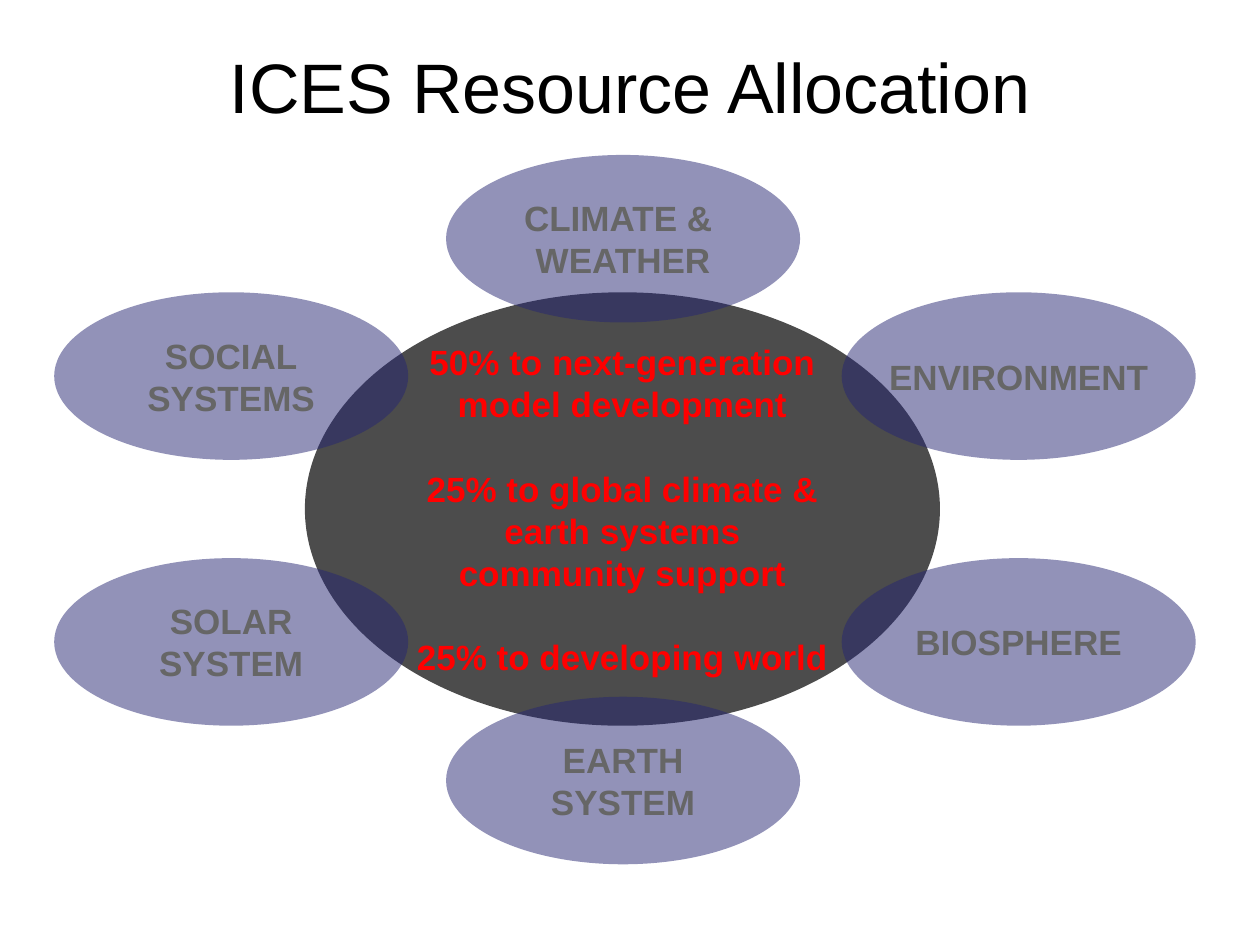
"""Build the ICES resource allocation slide: a hub ellipse ringed by six systems."""

from dataclasses import dataclass

from lxml.etree import SubElement
from pptx import Presentation
from pptx.dml.color import RGBColor
from pptx.enum.shapes import MSO_SHAPE as Preset
from pptx.enum.text import MSO_ANCHOR as Anchor, PP_ALIGN as Align
from pptx.oxml.ns import qn
from pptx.shapes.autoshape import Shape
from pptx.shapes.shapetree import GroupShapes
from pptx.text.text import TextFrame
from pptx.util import Inches, Pt

BLACK = RGBColor(0x00, 0x00, 0x00)
RED = RGBColor(0xFF, 0x00, 0x00)
GRAY = RGBColor(0x66, 0x66, 0x66)
INDIGO = RGBColor(0x26, 0x26, 0x73)

TITLE_FONT = {"name": "Arial", "size": Pt(40), "bold": False}
LABEL_FONT = {"name": "Arial", "size": Pt(20), "bold": True}
SYSTEM_FRAME = {"margin_left": 0, "margin_right": 0, "word_wrap": False}
SYSTEM_WIDTH, SYSTEM_HEIGHT = 2.81, 1.33
LEFT, CENTER, RIGHT = 0.43, 3.54, 6.68
TOP, UPPER, LOWER, BOTTOM = 1.23, 2.32, 4.43, 5.53


@dataclass(frozen=True)
class System:
    left: float
    top: float
    lines: tuple[str, ...]


SYSTEMS = (
    System(RIGHT, UPPER, ("ENVIRONMENT",)),
    System(RIGHT, LOWER, ("BIOSPHERE",)),
    System(CENTER, BOTTOM, ("EARTH", "SYSTEM")),
    System(CENTER, TOP, ("CLIMATE & ", "WEATHER")),
    System(LEFT, UPPER, ("SOCIAL", "SYSTEMS")),
    System(LEFT, LOWER, ("SOLAR", "SYSTEM")),
)
ALLOCATIONS = (
    "50% to next-generation model development",
    "25% to global climate & earth systems community support",
    "25% to developing world",
)


def write_lines(frame: TextFrame, lines: tuple[str, ...], font: dict,
                color: RGBColor, gap: float = 0) -> None:
    """Write centred paragraphs with a gap in points between them."""
    frame.word_wrap = True
    frame.vertical_anchor = Anchor.MIDDLE
    for index, line in enumerate(lines):
        paragraph = frame.add_paragraph() if index else frame.paragraphs[0]
        paragraph.alignment = Align.CENTER
        paragraph.space_before = Pt(gap if index else 0)
        run = paragraph.add_run()
        run.text = line
        for name, value in font.items():
            setattr(run.font, name, value)
        run.font.color.rgb = color


def add_ellipse(shapes: GroupShapes, left: float, top: float, width: float,
                height: float, color: RGBColor, opacity: int) -> Shape:
    """Add a borderless ellipse with an opacity in percent."""
    shape = shapes.add_shape(Preset.OVAL, Inches(left), Inches(top),
                             Inches(width), Inches(height))
    shape.shadow.inherit = False
    shape.line.fill.background()
    shape.fill.solid()
    shape.fill.fore_color.rgb = color
    fill_color = shape.element.spPr.find(qn("a:solidFill")).find(qn("a:srgbClr"))
    SubElement(fill_color, qn("a:alpha")).set("val", str(opacity * 1000))
    return shape


def add_system(shapes: GroupShapes, system: System) -> None:
    """Add one labelled system ellipse."""
    shape = add_ellipse(shapes, system.left, system.top, SYSTEM_WIDTH,
                        SYSTEM_HEIGHT, INDIGO, 50)
    write_lines(shape.text_frame, system.lines, LABEL_FONT, GRAY)
    for name, value in SYSTEM_FRAME.items():
        setattr(shape.text_frame, name, value)


def main() -> None:
    """Build and save the presentation."""
    presentation = Presentation()
    presentation.slide_width, presentation.slide_height = Inches(10), Inches(7.5)
    slide = presentation.slides.add_slide(presentation.slide_layouts[6])

    title = slide.shapes.add_textbox(0, Inches(0.21), Inches(10), Inches(0.94))
    write_lines(title.text_frame, ("ICES Resource Allocation",), TITLE_FONT, BLACK)

    diagram = slide.shapes.add_group_shape().shapes
    hub = add_ellipse(diagram, 2.42, UPPER, 5.04, 3.44, BLACK, 70)
    write_lines(hub.text_frame, ALLOCATIONS, LABEL_FONT, RED, gap=24)
    for system in SYSTEMS:
        add_system(diagram, system)

    presentation.save("out.pptx")


if __name__ == "__main__":
    main()
